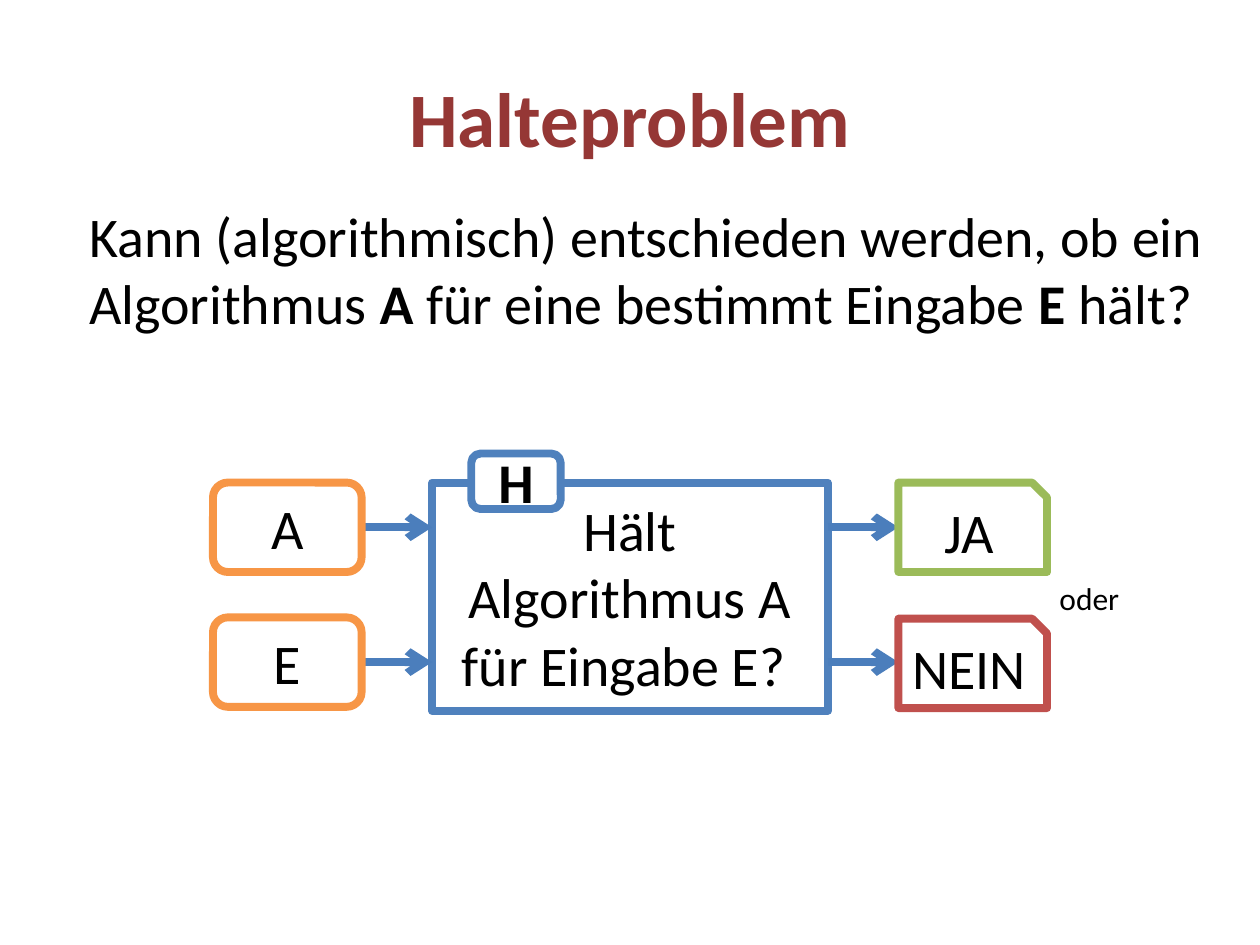
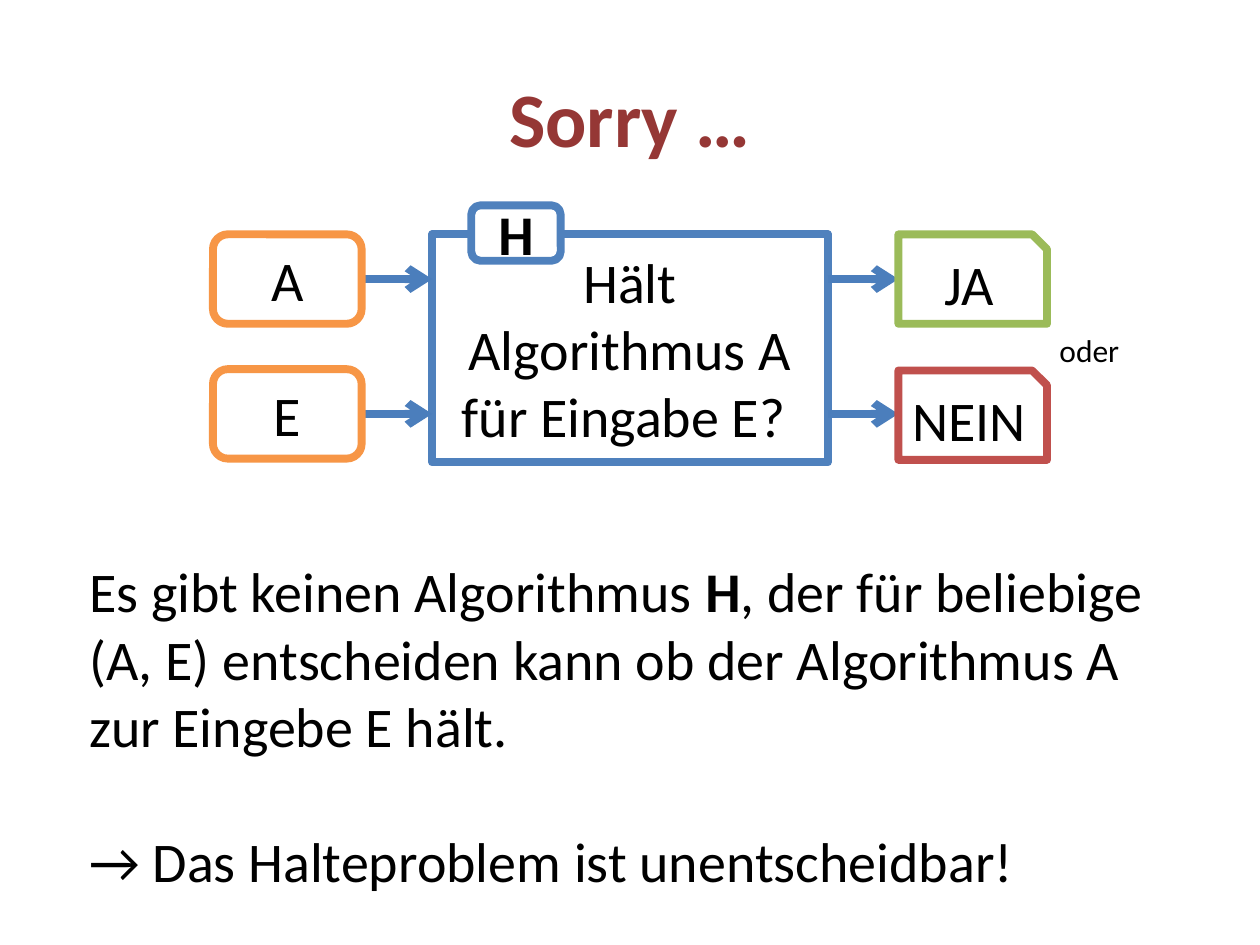
from lxml import etree
from pptx import Presentation
from pptx.dml.color import RGBColor
from pptx.enum.shapes import MSO_CONNECTOR, MSO_SHAPE
from pptx.enum.text import MSO_ANCHOR, PP_ALIGN
from pptx.oxml.ns import qn
from pptx.util import Inches, Pt

RECTANGLE = MSO_SHAPE.RECTANGLE
ROUNDED = MSO_SHAPE.ROUNDED_RECTANGLE
SNIPPED = MSO_SHAPE.SNIP_1_RECTANGLE
STRAIGHT = MSO_CONNECTOR.STRAIGHT
MIDDLE, TOP = MSO_ANCHOR.MIDDLE, MSO_ANCHOR.TOP
CENTER, LEFT = PP_ALIGN.CENTER, PP_ALIGN.LEFT

# Shared style
FONT = "Calibri"
TITLE_SIZE, BODY_SIZE, SMALL_SIZE = 44, 32, 18
LINE_WIDTH = 4.5
DARK_RED, BLACK, WHITE = "953735", "000000", "FFFFFF"
BLUE, ARROW_BLUE = "4F81BD", "4B7EBC"
ORANGE, GREEN, RED = "F79646", "9BBB59", "C0504D"

# Diagram grid
BOX_WIDTH, BOX_HEIGHT = 1.18, 0.71
INPUT_LEFT, MACHINE_LEFT, OUTPUT_LEFT = 1.69, 3.43, 7.13
MACHINE_WIDTH, MACHINE_HEIGHT = 3.14, 1.81
ROW_STEP = 1.07


def color(hex_value):
    return RGBColor.from_string(hex_value)


def write_paragraph(paragraph, text, size, hex_color, align):
    """Write text in which *stars* enclose the bold parts."""
    paragraph.alignment = align
    for index, part in enumerate(text.split("*")):
        if part:
            run = paragraph.add_run()
            run.text = part
            run.font.name = FONT
            run.font.size = Pt(size)
            run.font.bold = index % 2 == 1
            run.font.color.rgb = color(hex_color)


def add_text(slide, left, top, width, height, paragraphs, size=BODY_SIZE,
             hex_color=BLACK, align=LEFT, anchor=TOP, wrap=True, gap=0):
    box = slide.shapes.add_textbox(
        Inches(left), Inches(top), Inches(width), Inches(height))
    frame = box.text_frame
    frame.word_wrap = wrap
    frame.vertical_anchor = anchor
    for index, text in enumerate(paragraphs):
        paragraph = frame.add_paragraph() if index else frame.paragraphs[0]
        if index:
            paragraph.space_before = Pt(gap)
        write_paragraph(paragraph, text, size, hex_color, align)


def add_title(slide, text):
    add_text(slide, 0.5, 0.3, 9, 1.25, [f"*{text}*"], TITLE_SIZE, DARK_RED,
             CENTER, MIDDLE)


def add_box(slide, kind, left, top, width, height, text, line_color):
    shape = slide.shapes.add_shape(
        kind, Inches(left), Inches(top), Inches(width), Inches(height))
    shape.shadow.inherit = False
    shape.fill.solid()
    shape.fill.fore_color.rgb = color(WHITE)
    shape.line.color.rgb = color(line_color)
    shape.line.width = Pt(LINE_WIDTH)
    frame = shape.text_frame
    frame.word_wrap = True
    frame.vertical_anchor = MIDDLE
    write_paragraph(frame.paragraphs[0], text, BODY_SIZE, BLACK, CENTER)


def add_arrow(slide, start, end, y):
    arrow = slide.shapes.add_connector(
        STRAIGHT, Inches(start), Inches(y), Inches(end), Inches(y))
    arrow.line.color.rgb = color(ARROW_BLUE)
    arrow.line.width = Pt(LINE_WIDTH)
    properties = arrow._element.spPr
    line = properties.find(qn("a:ln"))
    etree.SubElement(line, qn("a:tailEnd"), type="arrow")
    etree.SubElement(properties, qn("a:effectLst"))


def add_decider(slide, top):
    """Draw machine H with its two inputs and two possible answers."""
    add_box(slide, RECTANGLE, MACHINE_LEFT, top, MACHINE_WIDTH,
            MACHINE_HEIGHT, "Hält Algorithmus A für Eingabe E? ", BLUE)

    rows = [("A", "JA", GREEN, 0), ("E", "NEIN", RED, 0.01)]
    for index, (given, answer, answer_color, shift) in enumerate(rows):
        row_top = top + index * ROW_STEP
        arrow_y = row_top + BOX_HEIGHT / 2
        add_arrow(slide, INPUT_LEFT + BOX_WIDTH, MACHINE_LEFT, arrow_y)
        add_arrow(slide, MACHINE_LEFT + MACHINE_WIDTH, OUTPUT_LEFT, arrow_y)
        add_box(slide, ROUNDED, INPUT_LEFT, row_top, BOX_WIDTH, BOX_HEIGHT,
                given, ORANGE)
        add_box(slide, SNIPPED, OUTPUT_LEFT, row_top + shift, BOX_WIDTH,
                BOX_HEIGHT, answer, answer_color)

    add_text(slide, OUTPUT_LEFT + BOX_WIDTH, top + 0.72, 0.68, 0.4, ["oder"],
             SMALL_SIZE, wrap=False)
    add_box(slide, ROUNDED, 3.74, top - 0.23, 0.71, 0.44, "*H*", BLUE)


def add_question_slide(slide):
    add_title(slide, "Halteproblem")
    add_text(slide, 0.61, 1.55, 9.19, 1.18, [
        "Kann (algorithmisch) entschieden werden, ob ein Algorithmus "
        "*A *für eine bestimmt Eingabe *E *hält?"])
    add_decider(slide, 3.83)


def add_answer_slide(slide):
    add_title(slide, "Sorry …")
    add_text(slide, 0.61, 4.37, 9.04, 2.79, [
        "Es gibt keinen Algorithmus *H*, der für beliebige (A, E) "
        "entscheiden kann ob der Algorithmus A zur Eingebe E hält.",
        "→ Das Halteproblem ist unentscheidbar!"], gap=39)
    add_decider(slide, 1.86)


def main():
    presentation = Presentation()
    presentation.slide_width = Inches(10)
    presentation.slide_height = Inches(7.5)
    blank = presentation.slide_layouts[6]
    for fill_slide in (add_question_slide, add_answer_slide):
        fill_slide(presentation.slides.add_slide(blank))
    presentation.save("out.pptx")


if __name__ == "__main__":
    main()
